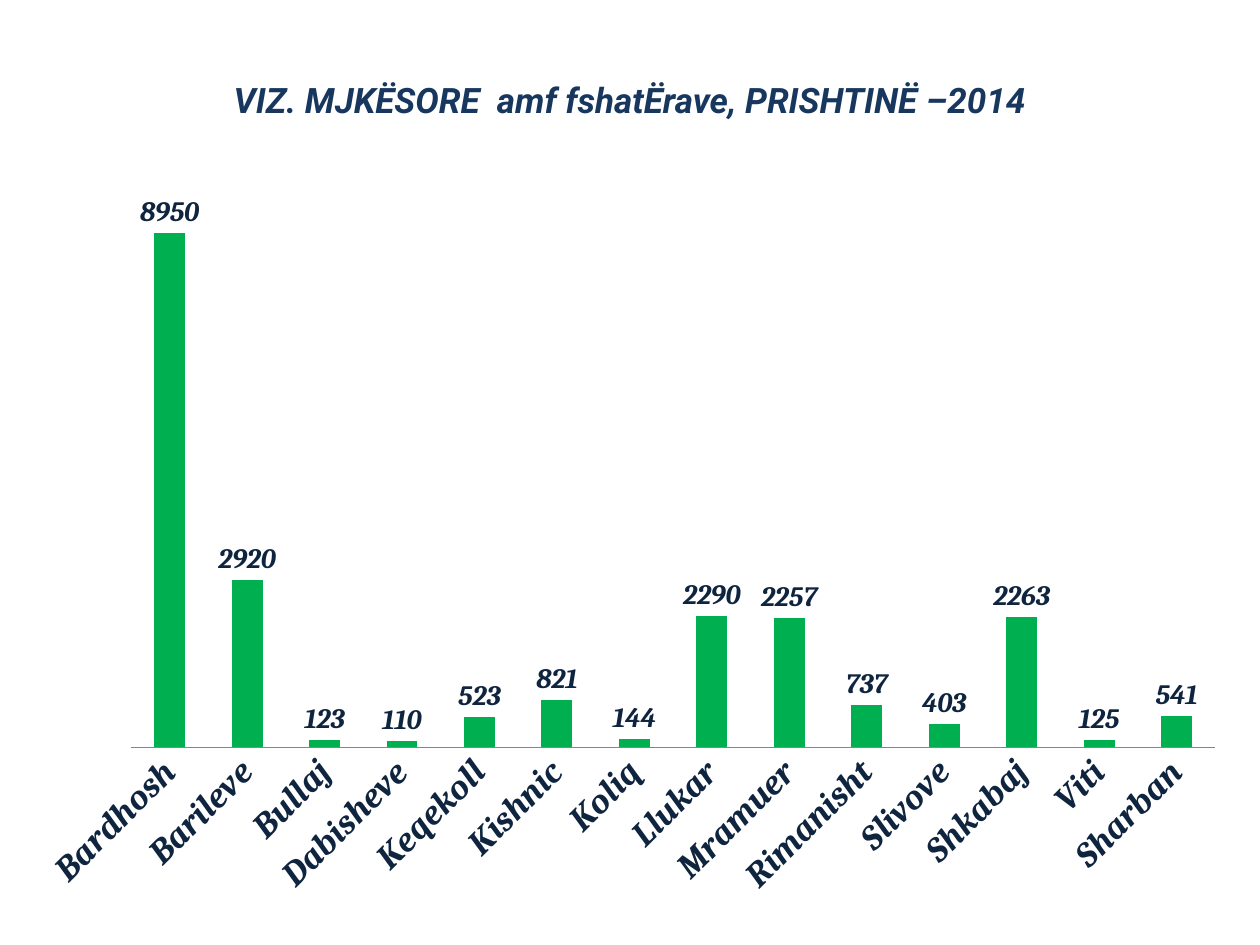
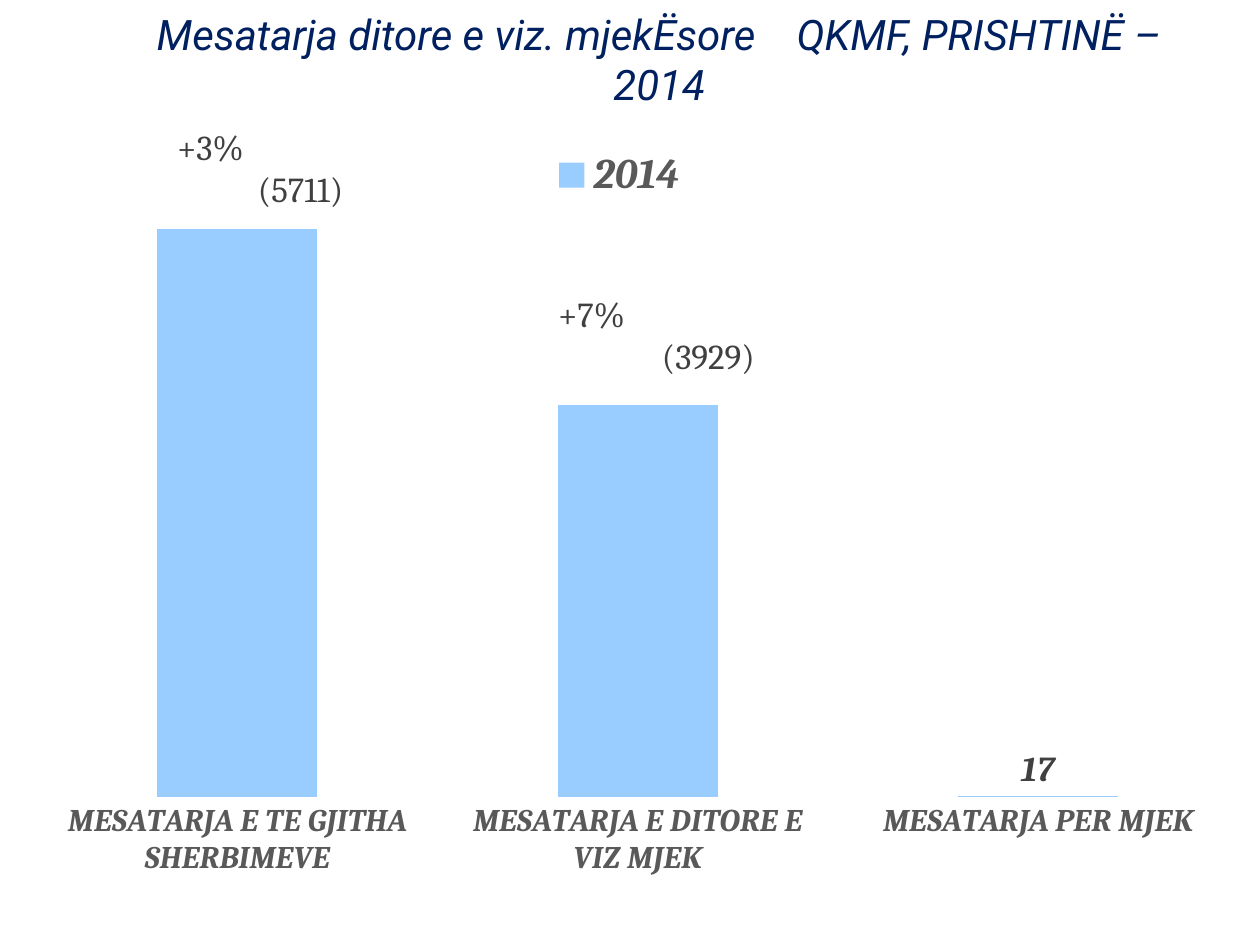
from lxml import etree
from pptx import Presentation
from pptx.chart.data import CategoryChartData
from pptx.dml.color import RGBColor
from pptx.enum.chart import XL_CHART_TYPE, XL_LABEL_POSITION, XL_LEGEND_POSITION, XL_TICK_MARK
from pptx.enum.text import MSO_ANCHOR, PP_ALIGN
from pptx.oxml.ns import qn
from pptx.util import Cm, Pt

COLUMNS = XL_CHART_TYPE.COLUMN_CLUSTERED
ABOVE_BAR = XL_LABEL_POSITION.OUTSIDE_END
LEGEND_TOP = XL_LEGEND_POSITION.TOP
NO_TICKS = XL_TICK_MARK.NONE
MIDDLE, TOP = MSO_ANCHOR.MIDDLE, MSO_ANCHOR.TOP
LEFT, CENTER, RIGHT = PP_ALIGN.LEFT, PP_ALIGN.CENTER, PP_ALIGN.RIGHT

NAVY = RGBColor(0x17, 0x37, 0x5E)
DEEP_BLUE = RGBColor(0x00, 0x20, 0x60)
INK = RGBColor(0x0F, 0x24, 0x3E)
GREEN = RGBColor(0x00, 0xB0, 0x50)
SKY = RGBColor(0x99, 0xCC, 0xFF)
GREY = RGBColor(0x59, 0x59, 0x59)
DARK_GREY = RGBColor(0x40, 0x40, 0x40)
AXIS_GREY = RGBColor(0x86, 0x86, 0x86)
BLACK = RGBColor(0, 0, 0)

TITLE_FONT, CHART_FONT, BASE_FONT = "Roboto", "Cambria", "Calibri"

VILLAGES_TITLE = "VIZ. MJKËSORE  amf fshatËrave, PRISHTINË –2014"
VILLAGE_VISITS = {
    "Bardhosh": 8950, "Barileve": 2920, "Bullaj": 123, "Dabisheve": 110,
    "Keqekoll": 523, "Kishnic": 821, "Koliq": 144, "Llukar": 2290,
    "Mramuer": 2257, "Rimanisht": 737, "Slivove": 403, "Shkabaj": 2263,
    "Viti": 125, "Sharban": 541,
}
DAILY_TITLE = "Mesatarja ditore e viz. mjekËsore    QKMF, PRISHTINË –2014"
DAILY_AVERAGES = {
    "MESATARJA E TE GJITHA SHERBIMEVE": 5695,
    "MESATARJA E DITORE E VIZ MJEK": 3927,
    "MESATARJA PER MJEK": 17,
}
GROWTH_NOTES = [
    ("+3%", "(5711)", (3.57, 2.54, 3.35, 2)),
    ("+7%", "(3929)", (11.25, 5.9, 3.97, 2)),
]


def style(font, name, size, color, bold=True, italic=True):
    font.name, font.size = name, Pt(size)
    font.bold, font.italic = bold, italic
    font.color.rgb = color


def add_text(slide, box, lines, anchor, inset, **look):
    frame = slide.shapes.add_textbox(*map(Cm, box)).text_frame
    frame.word_wrap = True
    frame.vertical_anchor = anchor
    frame.margin_left = frame.margin_right = Cm(inset)
    frame.margin_top = frame.margin_bottom = Cm(inset / 2)
    for index, (text, alignment) in enumerate(lines):
        paragraph = frame.add_paragraph() if index else frame.paragraphs[0]
        paragraph.alignment = alignment
        run = paragraph.add_run()
        run.text = text
        style(run.font, **look)


def add_title(slide, box, title, size, color, bold):
    add_text(slide, box, [(title, CENTER)], MIDDLE, 0.25,
             name=TITLE_FONT, size=size, color=color, bold=bold)


def manual_layout(**settings):
    layout = etree.Element(qn("c:layout"))
    manual = etree.SubElement(layout, qn("c:manualLayout"))
    for tag, value in settings.items():
        etree.SubElement(manual, qn("c:" + tag)).set("val", str(value))
    return layout


def add_columns(slide, box, series_name, values, color, maximum, plot, axis_size, axis_color):
    data = CategoryChartData(number_format="0")
    data.categories = list(values)
    data.add_series(series_name, list(values.values()))
    chart = slide.shapes.add_chart(COLUMNS, *map(Cm, box), data).chart
    chart.has_title = chart.has_legend = False
    style(chart.font, BASE_FONT, 10, BLACK, False, False)

    columns = chart.plots[0]
    columns.gap_width = 150
    columns.vary_by_categories = False
    series = columns.series[0]
    series.format.fill.solid()
    series.format.fill.fore_color.rgb = color

    scale = chart.value_axis
    scale.minimum_scale, scale.maximum_scale = 0, maximum
    scale.has_major_gridlines = scale.visible = False
    axis = chart.category_axis
    axis.major_tick_mark = axis.minor_tick_mark = NO_TICKS
    style(axis.tick_labels.font, CHART_FONT, axis_size, axis_color)

    area = chart._chartSpace.chart.plotArea
    for old_layout in area.findall(qn("c:layout")):
        area.remove(old_layout)
    x, y, w, h = plot
    area.insert(0, manual_layout(layoutTarget="inner", xMode="edge", yMode="edge",
                                 x=x, y=y, w=w, h=h))
    return chart, series


def build_villages(slide):
    add_title(slide, (1.75, 1.02, 21.9, 1.96), VILLAGES_TITLE, 20, NAVY, True)
    chart, series = add_columns(slide, (0.43, 3.18, 24.56, 15.24), "Series 1", VILLAGE_VISITS,
                                GREEN, 10000, (0.09, 0.02, 0.89, 0.76), 20, INK)
    chart.category_axis.format.line.color.rgb = AXIS_GREY
    for body in chart._chartSpace.xpath(".//c:catAx/c:txPr/a:bodyPr"):
        body.set("rot", "-2700000")
    labels = series.data_labels
    labels.show_value = True
    labels.position = ABOVE_BAR
    style(labels.font, CHART_FONT, 16, INK)


def build_daily(slide):
    chart, series = add_columns(slide, (0, 2.54, 24.97, 16.51), "2014", DAILY_AVERAGES,
                                SKY, 6070, (0.03, 0.08, 0.97, 0.74), 18, GREY)
    chart.category_axis.format.line.fill.background()
    chart.has_legend = True
    legend = chart.legend
    legend.position = LEGEND_TOP
    legend.include_in_layout = False
    style(legend.font, CHART_FONT, 24, GREY)
    legend_place = manual_layout(xMode="edge", yMode="edge", x=0.44, y=0.02, w=0.12, h=0.08)
    chart._chartSpace.xpath(".//c:legend/c:legendPos")[0].addnext(legend_place)

    per_doctor = series.points[len(DAILY_AVERAGES) - 1].data_label
    style(per_doctor.font, CHART_FONT, 20, DARK_GREY)
    per_doctor.position = ABOVE_BAR
    series.data_labels.show_value = False
    for growth, average, box in GROWTH_NOTES:
        add_text(slide, box, [(growth, LEFT), (average, RIGHT)], TOP, 0,
                 name=CHART_FONT, size=20, color=DARK_GREY, bold=False, italic=False)
    add_title(slide, (2.34, 0.64, 21.9, 1.09), DAILY_TITLE, 24, DEEP_BLUE, False)


def main():
    deck = Presentation()
    deck.slide_width, deck.slide_height = Cm(25.4), Cm(19.05)
    for build in (build_villages, build_daily):
        build(deck.slides.add_slide(deck.slide_layouts[6]))
    deck.save("out.pptx")


if __name__ == "__main__":
    main()
